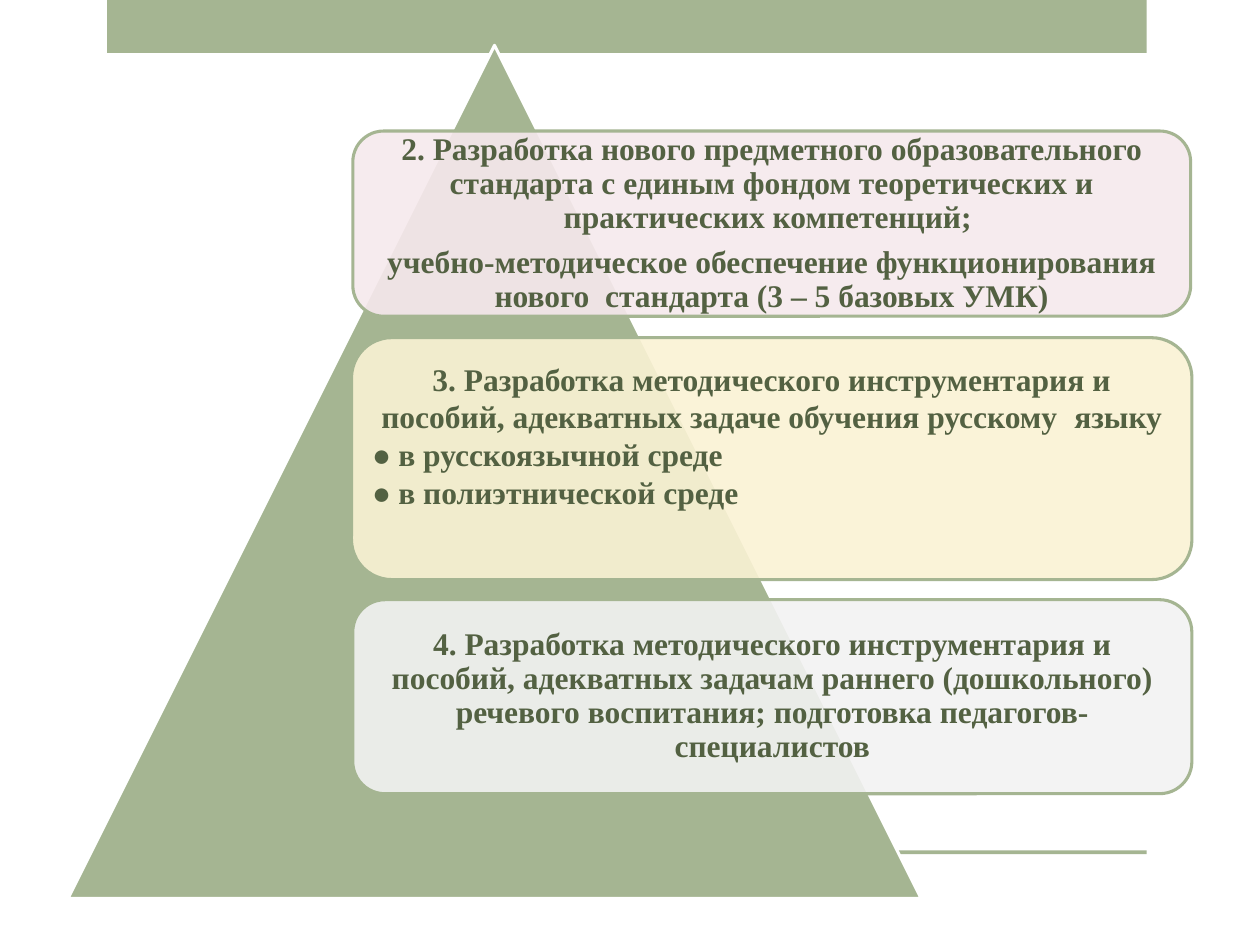
from lxml import etree
from pptx import Presentation
from pptx.dml.color import RGBColor
from pptx.enum.shapes import MSO_SHAPE
from pptx.enum.text import MSO_ANCHOR, PP_ALIGN
from pptx.oxml.ns import qn
from pptx.util import Inches, Pt

RECT = MSO_SHAPE.RECTANGLE
ROUND = MSO_SHAPE.ROUNDED_RECTANGLE
PEAK = MSO_SHAPE.ISOSCELES_TRIANGLE
MIDDLE = MSO_ANCHOR.MIDDLE
LEFT, CENTER = PP_ALIGN.LEFT, PP_ALIGN.CENTER

COLORS = {
    "sage": "A5B592", "white": "FFFFFF", "text": "536142",
    "rose": "F6E9ED", "cream": "FAF2D4", "gray": "F2F2F2",
}
SERIF, NARROW = "Times New Roman", "Arial Narrow"


class Deck:
    """Holds the slide style and draws each kind of element."""

    def __init__(self, slide):
        self.slide = slide
        self.size = Pt(18)
        self.edge = Pt(1.75)
        self.inset = Inches(0.07)

    def color(self, name):
        return RGBColor.from_string(COLORS[name])

    def shape(self, kind, box, fill, line=None):
        item = self.slide.shapes.add_shape(kind, *map(Inches, box))
        item.shadow.inherit = False
        item.fill.solid()
        item.fill.fore_color.rgb = self.color(fill)
        if line:
            item.line.color.rgb = self.color(line)
            item.line.width = self.edge
        else:
            item.line.fill.background()
        return item

    def fade(self, item, share):
        tint = item.fill._xPr.find(qn("a:solidFill"))[0]
        etree.SubElement(tint, qn("a:alpha")).set("val", str(share * 1000))

    def card(self, box, fill, paras, tight=True, foot=0.07):
        item = self.shape(ROUND, box, fill, "sage")
        self.fade(item, 90)
        frame = item.text_frame
        frame.word_wrap = True
        frame.vertical_anchor = MIDDLE
        frame.margin_left = frame.margin_right = frame.margin_top = self.inset
        frame.margin_bottom = Inches(foot)
        for i, (align, runs) in enumerate(paras):
            para = frame.add_paragraph() if i else frame.paragraphs[0]
            para.alignment = align
            if tight:
                para.line_spacing = 0.9
                para.space_after = Pt(6.3)
            for text, font in runs:
                self.run(para, text, font)

    def run(self, para, text, name):
        run = para.add_run()
        run.text = text
        font = run.font
        font.name, font.size, font.bold = name, self.size, True
        font.color.rgb = self.color("text")


def main():
    show = Presentation()
    show.slide_width, show.slide_height = Inches(10), Inches(7.5)
    deck = Deck(show.slides.add_slide(show.slide_layouts[6]))

    for top, height in ((0, 0.42), (6.75, 0.03)):
        deck.shape(RECT, (0.85, top, 8.25, height), "sage")
    deck.shape(PEAK, (0.54, 0.36, 6.77, 6.77), "sage", "white")

    deck.card((2.8, 1.04, 6.65, 1.47), "rose", [
        (CENTER, [("2. Разработка нового предметного образовательного стандарта "
                   "с единым фондом теоретических и практических компетенций; ", SERIF)]),
        (CENTER, [("учебно-методическое обеспечение функционирования "
                   "нового  стандарта (3 – 5 базовых УМК)", SERIF)]),
    ])
    points = ("в русскоязычной среде", "в полиэтнической среде")
    deck.card((2.79, 2.68, 6.67, 1.92), "cream", [
        (CENTER, [("3. Разработка методического инструментария и пособий, "
                   "адекватных задаче обучения русскому \tязыку", SERIF)]),
        *((LEFT, [("● ", NARROW), (point, SERIF)]) for point in points),
    ], tight=False, foot=0.44)
    deck.card((2.8, 4.76, 6.66, 1.54), "gray", [
        (CENTER, [("4. Разработка методического инструментария и пособий, "
                   "адекватных задачам раннего (дошкольного) речевого воспитания; "
                   "подготовка педагогов-специалистов", SERIF)]),
    ])
    show.save("out.pptx")


if __name__ == "__main__":
    main()
